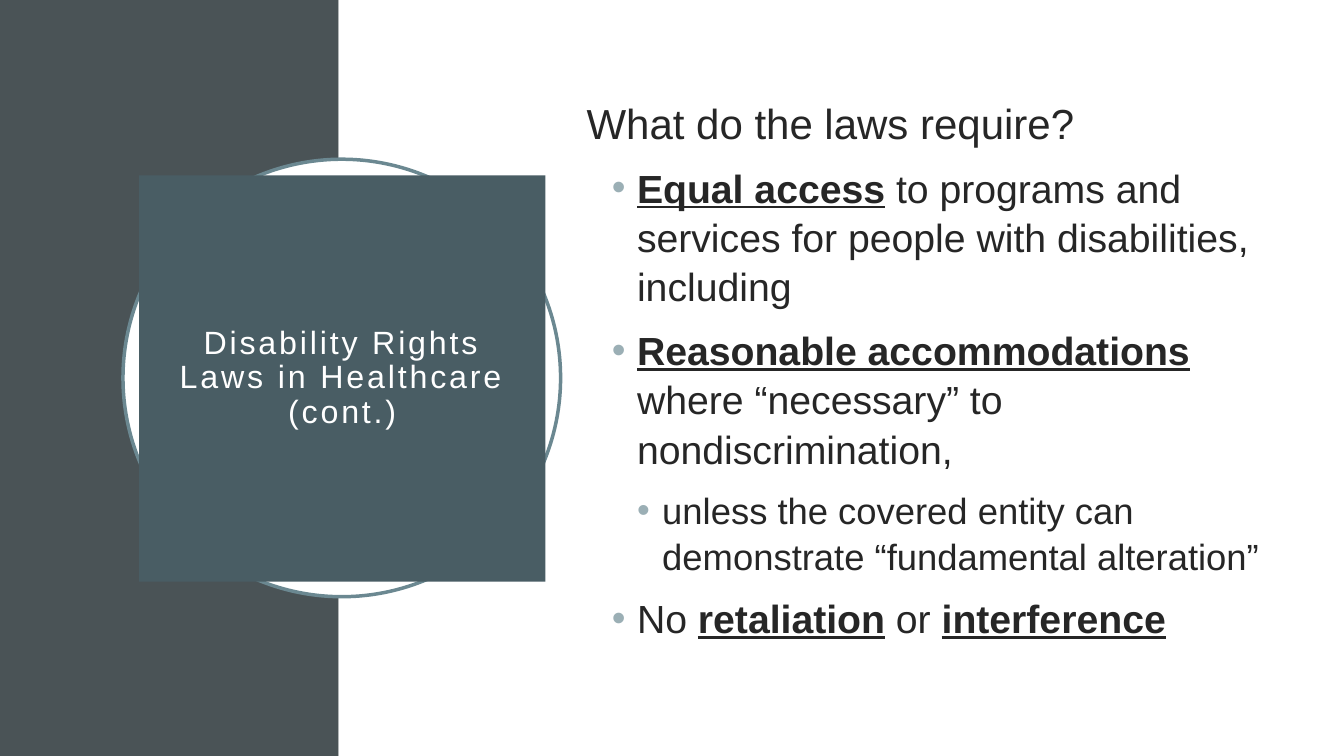
from pptx import Presentation
from pptx.dml.color import RGBColor
from pptx.enum.shapes import MSO_SHAPE as Preset
from pptx.enum.text import MSO_ANCHOR as Anchor, PP_ALIGN as Align
from pptx.oxml.ns import qn
from pptx.util import Inches, Pt
from lxml.etree import SubElement


def color(value):
    return RGBColor.from_string(value)


class SlideBuilder:
    """Builds one slide in a shared style."""

    font = "Arial"
    ink = "262626"
    bullet_ink = "9BAFB5"

    def __init__(self, slide):
        self.slide = slide

    def shape(self, preset, left, top, width, height, fill, line=None):
        shape = self.slide.shapes.add_shape(
            preset, Inches(left), Inches(top), Inches(width), Inches(height))
        shape.shadow.inherit = False
        shape.fill.solid()
        shape.fill.fore_color.rgb = color(fill)
        if line:
            shape.line.color.rgb = color(line)
            shape.line.width = Pt(2.5)
        else:
            shape.line.fill.background()
        return shape

    def style(self, font, size, ink):
        font.name = self.font
        font.size = Pt(size)
        font.color.rgb = color(ink)

    def title(self, shape, text, size):
        frame = shape.text_frame
        frame.word_wrap = True
        frame.vertical_anchor = Anchor.MIDDLE
        frame.margin_left = frame.margin_right = Inches(0.2)
        frame.margin_top = frame.margin_bottom = Inches(0.2)
        frame.text = text
        para = frame.paragraphs[0]
        para.alignment = Align.CENTER
        para.line_spacing = 0.9
        span = para.runs[0]
        self.style(span.font, size, "FFFFFF")
        span.font._element.set("spc", "200")

    def bullet(self, para, level):
        para.level = level
        props = para._p.get_or_add_pPr()
        props.set("marL", str(Inches(0.25 + 0.25 * level)))
        props.set("indent", str(Inches(-0.25)))
        tint = SubElement(props, qn("a:buClr"))
        SubElement(tint, qn("a:srgbClr")).set("val", self.bullet_ink)
        SubElement(props, qn("a:buFont")).set("typeface", self.font)
        SubElement(props, qn("a:buChar")).set("char", "•")

    def body(self, left, top, width, height, items):
        box = self.slide.shapes.add_textbox(
            Inches(left), Inches(top), Inches(width), Inches(height))
        frame = box.text_frame
        frame.word_wrap = True
        frame.vertical_anchor = Anchor.MIDDLE
        frame.margin_top = frame.margin_bottom = 0
        for number, (level, size, spans) in enumerate(items):
            para = frame.add_paragraph() if number else frame.paragraphs[0]
            para.line_spacing = 1.05
            if number:
                para.space_before = Pt(10)
            if level:
                self.bullet(para, level)
            for text, strong in spans:
                span = para.add_run()
                span.text = text
                self.style(span.font, size, self.ink)
                span.font.bold = span.font.underline = strong


def main():
    deck = Presentation()
    deck.slide_width, deck.slide_height = Inches(13.33), Inches(7.5)
    page = SlideBuilder(deck.slides.add_slide(deck.slide_layouts[6]))

    page.shape(Preset.RECTANGLE, 0, 0, 3.36, 7.5, "4A5356")
    page.shape(Preset.RECTANGLE, 3.36, 0, 9.97, 7.5, "FFFFFF")
    page.shape(Preset.OVAL, 1.22, 1.58, 4.34, 4.34, "FFFFFF", "6B8891")
    panel = page.shape(Preset.RECTANGLE, 1.38, 1.74, 4.03, 4.03, "495D64")
    page.title(panel, "Disability Rights Laws in Healthcare (cont.)", 23)

    page.body(5.72, 1.07, 7.14, 5.16, [
        (0, 30, [("What do the laws require?", False)]),
        (1, 28, [("Equal access", True),
                 (" to programs and services for people with disabilities, including", False)]),
        (1, 28, [("Reasonable accommodations", True),
                 (" where “necessary” to nondiscrimination,", False)]),
        (2, 26, [("unless the covered entity can demonstrate “fundamental alteration”", False)]),
        (1, 28, [("No ", False), ("retaliation", True),
                 (" or ", False), ("interference", True)]),
    ])
    deck.save("out.pptx")


if __name__ == "__main__":
    main()
